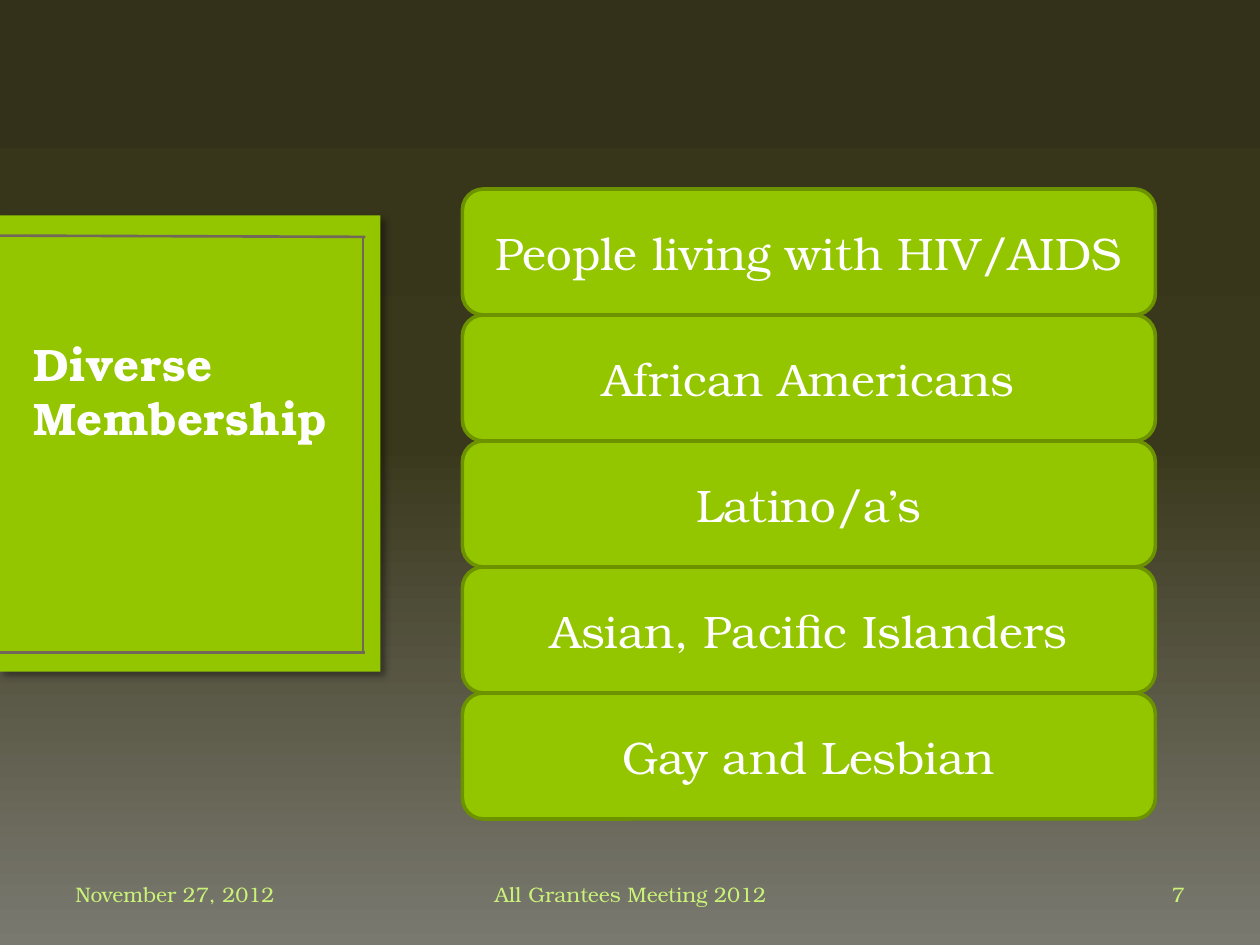
from copy import deepcopy
from dataclasses import dataclass

from lxml import etree
from pptx import Presentation
from pptx.dml.color import RGBColor
from pptx.enum.shapes import MSO_CONNECTOR, MSO_SHAPE
from pptx.enum.text import MSO_ANCHOR, PP_ALIGN
from pptx.oxml.ns import qn
from pptx.util import Inches, Pt

RECT = MSO_SHAPE.RECTANGLE
ROUND = MSO_SHAPE.ROUNDED_RECTANGLE
STRAIGHT = MSO_CONNECTOR.STRAIGHT
LEFT, CENTER, RIGHT = PP_ALIGN.LEFT, PP_ALIGN.CENTER, PP_ALIGN.RIGHT
MIDDLE, BOTTOM = MSO_ANCHOR.MIDDLE, MSO_ANCHOR.BOTTOM


@dataclass(frozen=True)
class Theme:
    """Colours, font and type sizes of the slide."""
    font: str = "TeX Gyre Bonum"
    green: str = "94C600"
    edge: str = "6D9200"
    frame: str = "71685A"
    white: str = "FFFFFF"
    title: str = "FFFEFE"
    pale: str = "CAF278"
    shade: str = "000000"
    back: tuple = ((0, "7A7970"), (0.53, "3A381C"), (1, "333119"))
    large: int = 26
    small: int = 12


THEME = Theme()
GROUPS = ("People living with HIV/AIDS", "African Americans", "Latino/a’s",
          "Asian, Pacific Islanders", "Gay and Lesbian")


def rgb(code):
    """Turn a hex code into a colour."""
    return RGBColor.from_string(code)


def paint_back(slide):
    """Fill the background with the three-stop gradient."""
    fill = slide.background.fill
    fill.gradient()
    fill.gradient_angle = 90
    stops = slide.element.find(".//" + qn("a:gsLst"))
    stops.insert(1, deepcopy(stops[0]))
    for stop, (place, code) in zip(fill.gradient_stops, THEME.back):
        stop.position = place
        stop.color.rgb = rgb(code)


def put_text(shape, text, size=THEME.large, color=THEME.white, bold=False,
             align=LEFT, anchor=MIDDLE, space=0):
    """Write formatted text into a shape."""
    frame = shape.text_frame
    frame.word_wrap = True
    frame.vertical_anchor = anchor
    para = frame.paragraphs[0]
    para.alignment = align
    run = para.add_run()
    run.text = text
    font = run.font
    font.name, font.size, font.bold = THEME.font, Pt(size), bold
    font.color.rgb = rgb(color)
    if space:
        run._r.get_or_add_rPr().set("spc", str(round(space * 100)))


def add_label(slide, box, text, **style):
    """Add a text box."""
    put_text(slide.shapes.add_textbox(*map(Inches, box)), text, **style)


def add_block(slide, kind, box, edge=None):
    """Add a green shape with an optional outline."""
    shape = slide.shapes.add_shape(kind, *map(Inches, box))
    shape.shadow.inherit = False
    shape.fill.solid()
    shape.fill.fore_color.rgb = rgb(THEME.green)
    if edge:
        shape.line.color.rgb = rgb(edge)
        shape.line.width = Pt(2.08)
    else:
        shape.line.fill.background()
    return shape


def cast_shade(shape):
    """Give a shape a soft shadow to the lower right."""
    effects = shape._element.spPr.find(qn("a:effectLst"))
    outer = etree.SubElement(effects, qn("a:outerShdw"), blurRad=str(Pt(4)),
                             dist=str(Pt(3)), dir="2700000", algn="tl",
                             rotWithShape="0")
    color = etree.SubElement(outer, qn("a:srgbClr"), val=THEME.shade)
    etree.SubElement(color, qn("a:alpha"), val="40000")


def add_line(slide, *ends):
    """Add a thin frame line."""
    line = slide.shapes.add_connector(STRAIGHT, *map(Inches, ends))
    line.line.color.rgb = rgb(THEME.frame)
    line.line.width = Pt(1.5)
    etree.SubElement(line._element.spPr, qn("a:effectLst"))


def add_panel(slide):
    """Add the title panel with its frame and title."""
    cast_shade(add_block(slide, RECT, (0, 1.71, 3.02, 3.62)))
    add_line(slide, 2.88, 1.87, 2.88, 5.17)
    add_line(slide, 0, 1.87, 2.9, 1.88)
    add_line(slide, 0, 5.18, 2.9, 5.18)
    add_label(slide, (0.17, 2.08, 2.6, 1.5), "Diverse Membership",
              color=THEME.title, bold=True, anchor=BOTTOM, space=0.2)


def add_foot(slide):
    """Add the date, the meeting name and the slide number."""
    for left, width, text, align in (
            (0.5, 2.33, "November 27, 2012", LEFT),
            (3.1, 3.81, "All Grantees Meeting 2012", CENTER),
            (7.17, 2.33, "7", RIGHT)):
        add_label(slide, (left, 6.9, width, 0.4), text, size=THEME.small,
                  color=THEME.pale, align=align)


def main():
    """Build and save the slide."""
    deck = Presentation()
    deck.slide_width, deck.slide_height = Inches(10), Inches(7.5)
    slide = deck.slides.add_slide(deck.slide_layouts[6])
    paint_back(slide)
    add_panel(slide)
    add_foot(slide)
    for row, group in enumerate(GROUPS):
        block = add_block(slide, ROUND, (3.67, 1.5 + row, 5.5, 1), THEME.edge)
        put_text(block, group, align=CENTER)
    deck.save("out.pptx")


if __name__ == "__main__":
    main()
